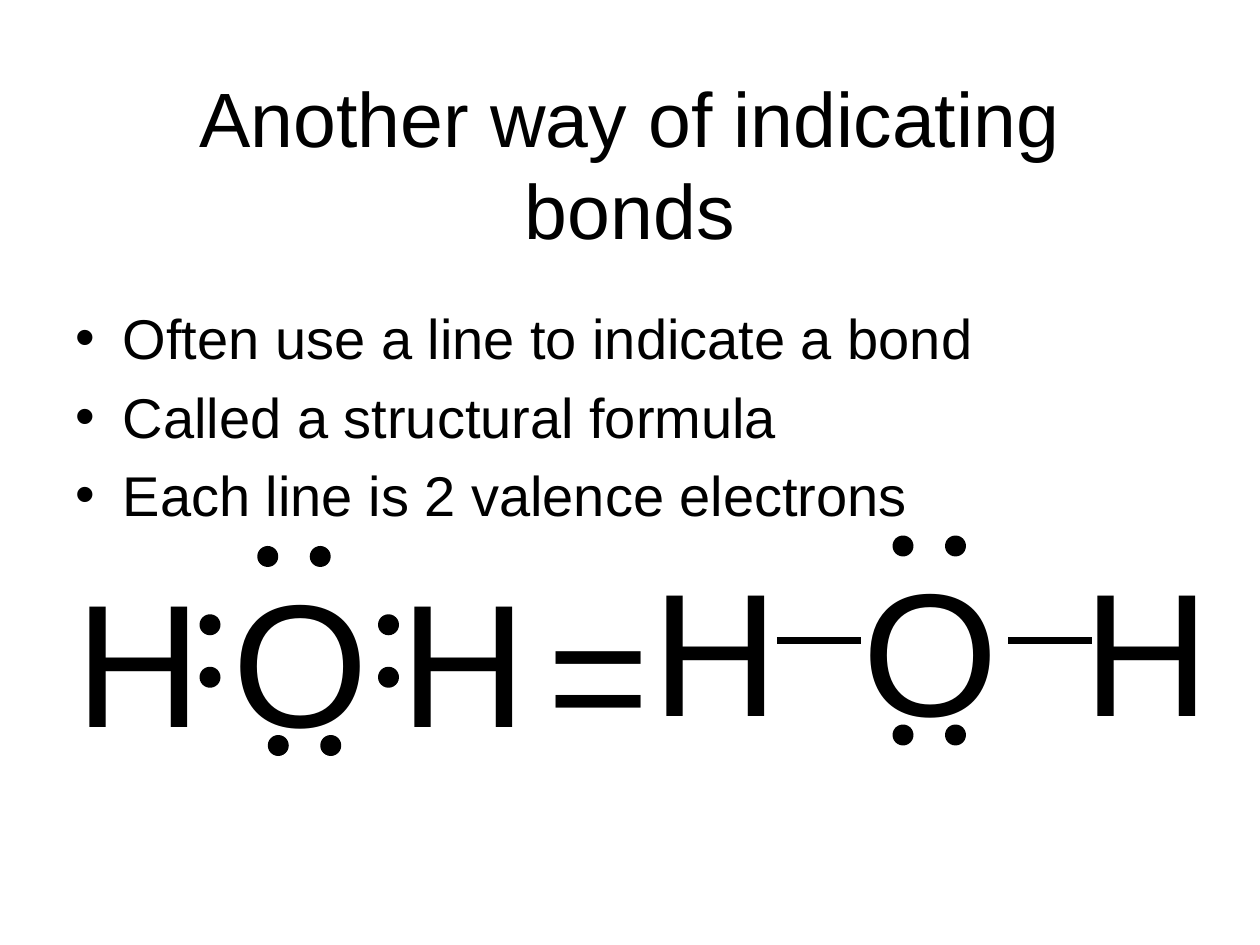
from lxml import etree
from pptx import Presentation
from pptx.dml.color import RGBColor
from pptx.enum.shapes import MSO_CONNECTOR, MSO_SHAPE
from pptx.enum.text import MSO_ANCHOR, MSO_AUTO_SIZE
from pptx.oxml.ns import qn
from pptx.util import Pt

STRAIGHT = MSO_CONNECTOR.STRAIGHT
OVAL = MSO_SHAPE.OVAL
MIDDLE = MSO_ANCHOR.MIDDLE
NO_AUTOFIT = MSO_AUTO_SIZE.NONE
GROW = MSO_AUTO_SIZE.SHAPE_TO_FIT_TEXT

BLACK = "000000"
DOT_SIZE = 12
DOT_PITCH = 30


def rgb(color):
    return RGBColor.from_string(color)


def format_runs(text_frame, size):
    for paragraph in text_frame.paragraphs:
        for run in paragraph.runs:
            run.font.name = "Arial"
            run.font.size = Pt(size)
            run.font.color.rgb = rgb(BLACK)


presentation = Presentation()
presentation.slide_width = Pt(720)
presentation.slide_height = Pt(540)
slide = presentation.slides.add_slide(presentation.slide_layouts[1])

# Title and bullet list
title = slide.shapes.title
title.left, title.top, title.width, title.height = Pt(54), Pt(36.5), Pt(612), Pt(113)
title.text_frame.text = "Another way of indicating bonds"
title.text_frame.vertical_anchor = MIDDLE
title.text_frame.auto_size = NO_AUTOFIT
format_runs(title.text_frame, 44)

body = slide.placeholders[1]
body.left, body.top, body.width, body.height = Pt(36), Pt(170), Pt(648), Pt(137)
body.text_frame.text = "\n".join([
    "Often use a line to indicate a bond",
    "Called a structural formula",
    "Each line is 2 valence electrons",
])
body.text_frame.auto_size = NO_AUTOFIT
format_runs(body.text_frame, 32)

# Atoms of the electron dot formula, equals sign, atoms of the structural formula
symbols = [
    ("H", 36, 312), ("H", 222, 312), ("O", 126, 312),
    ("=", 306, 318),
    ("H", 366, 306), ("H", 612, 306), ("O", 486, 306),
]
for symbol, left, top in symbols:
    text_box = slide.shapes.add_textbox(Pt(left), Pt(top), Pt(78), Pt(127.5))
    text_frame = text_box.text_frame
    text_frame.word_wrap = True
    text_frame.auto_size = GROW
    text_frame.text = symbol
    format_runs(text_frame, 100)
    properties = text_frame.paragraphs[0]._p.get_or_add_pPr()
    space_before = etree.SubElement(properties, qn("a:spcBef"))
    etree.SubElement(space_before, qn("a:spcPct"), val="50000")

# Electron pairs: left, top, step to the second dot
electron_pairs = [
    (114, 351, 0, DOT_PITCH), (216, 351, 0, DOT_PITCH),
    (147, 312, DOT_PITCH, 0), (153, 420, DOT_PITCH, 0),
    (510, 306, DOT_PITCH, 0), (510, 414, DOT_PITCH, 0),
]
for left, top, step_x, step_y in electron_pairs:
    pair = slide.shapes.add_group_shape()
    for index in range(2):
        dot = pair.shapes.add_shape(
            OVAL, Pt(left + index * step_x), Pt(top + index * step_y),
            Pt(DOT_SIZE), Pt(DOT_SIZE))
        dot.shadow.inherit = False
        dot.fill.solid()
        dot.fill.fore_color.rgb = rgb(BLACK)
        dot.line.fill.background()

# Bond lines
for left in (444, 576):
    bond = slide.shapes.add_connector(STRAIGHT, Pt(left), Pt(366), Pt(left + 48), Pt(366))
    bond.line.color.rgb = rgb(BLACK)
    bond.line.width = Pt(4)
    etree.SubElement(bond._element.spPr, qn("a:effectLst"))

presentation.save("out.pptx")
